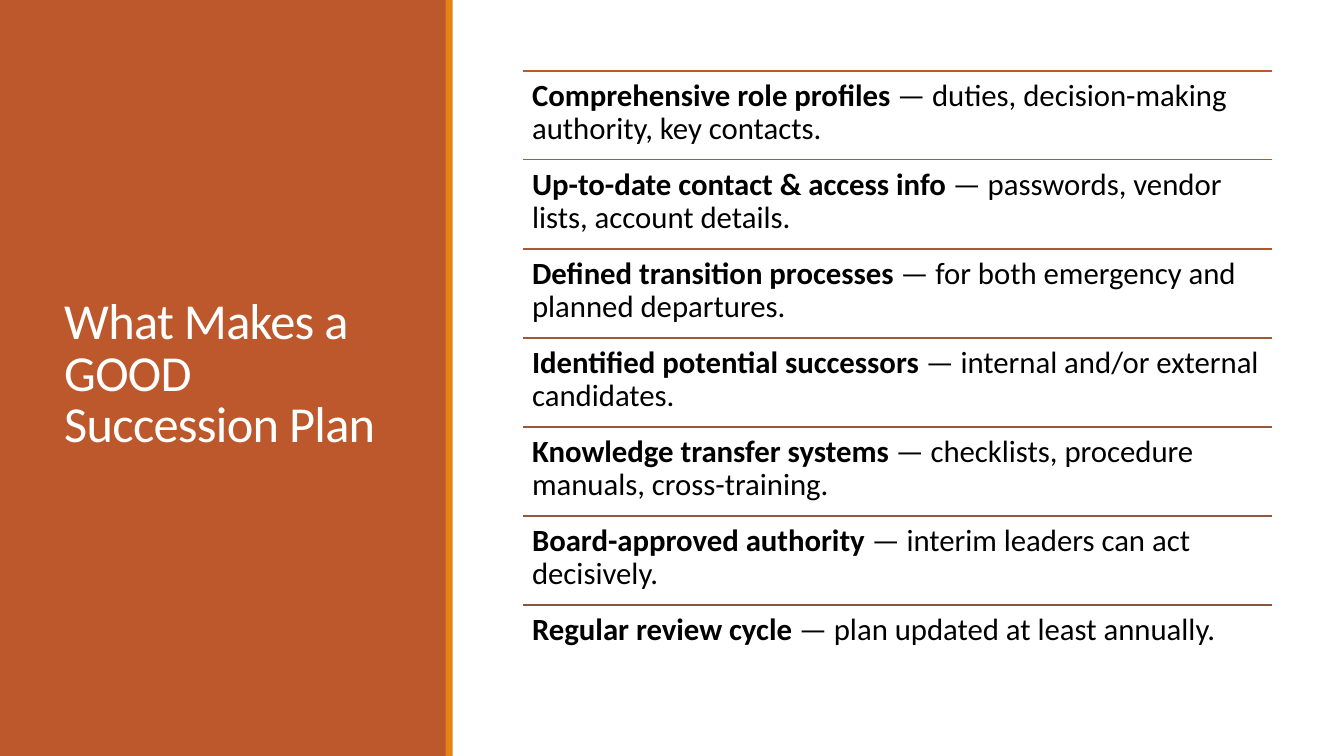
from pptx import Presentation
from pptx.dml.color import RGBColor as RGB
from pptx.enum.shapes import MSO_CONNECTOR as CONN, MSO_SHAPE as SHAPE
from pptx.enum.text import MSO_ANCHOR as ANCHOR
from pptx.oxml.ns import qn
from pptx.util import Cm, Pt
from lxml import etree

COLORS = {
    "panel": "BD582C",
    "accent": "E48312",
    "white": "FFFFFF",
    "text": "000000",
    "rule1": "BD582C",
    "rule2": "B35830",
    "rule3": "AA5834",
    "rule4": "A05837",
    "rule5": "97573A",
    "rule6": "8F573D",
    "rule7": "865640",
}
TITLE = {"name": "Calibri", "size": Pt(36)}
LEAD = {"name": "Calibri", "size": Pt(22), "bold": True}
BODY = {**LEAD, "bold": False}

ITEMS = [
    ("Comprehensive role profiles", "duties, decision-making authority, key contacts."),
    ("Up-to-date contact & access info", "passwords, vendor lists, account details."),
    ("Defined transition processes", "for both emergency and planned departures."),
    ("Identified potential successors", "internal and/or external candidates."),
    ("Knowledge transfer systems", "checklists, procedure manuals, cross-training."),
    ("Board-approved authority", "interim leaders can act decisively."),
    ("Regular review cycle", "plan updated at least annually."),
]


def color(key):
    return RGB.from_string(COLORS[key])


def add_rect(slide, x, y, w, h, fill):
    sp = slide.shapes.add_shape(SHAPE.RECTANGLE, Cm(x), Cm(y), Cm(w), Cm(h))
    sp.shadow.inherit = False
    sp.fill.solid()
    sp.fill.fore_color.rgb = color(fill)
    sp.line.fill.background()


def add_text(slide, x, y, w, h, line_spacing, frame):
    tf = slide.shapes.add_textbox(Cm(x), Cm(y), Cm(w), Cm(h)).text_frame
    for name, value in {"word_wrap": True, **frame}.items():
        setattr(tf, name, value)
    p = tf.paragraphs[0]
    p.line_spacing = line_spacing
    return p


def add_run(p, text, fmt, fill):
    r = p.add_run()
    r.text = text
    for name, value in fmt.items():
        setattr(r.font, name, value)
    r.font.color.rgb = color(fill)
    return r


def add_rule(slide, x, y, w, fill):
    ln = slide.shapes.add_connector(CONN.STRAIGHT, Cm(x), Cm(y), Cm(x + w), Cm(y))
    ln.line.color.rgb = color(fill)
    ln.line.width = Pt(1.25)
    etree.SubElement(ln._element.spPr, qn("a:effectLst"))


def title_panel(slide, x, y, w, h):
    add_rect(slide, x, y, w, h, "panel")
    p = add_text(slide, x + 1.37, y + 1.45, w - 2.69, h - 3.02, 0.85,
                 {"vertical_anchor": ANCHOR.MIDDLE})
    r = add_run(p, "What Makes a GOOD Succession Plan", TITLE, "white")
    r._r.get_or_add_rPr().set("spc", "-50")
    add_rect(slide, x + w - 0.02, y, 0.18, h, "accent")


def ruled_list(slide, x, y, w, h):
    row = h / len(ITEMS)
    inset = Cm(0.23)
    margins = {f"margin_{side}": inset for side in ("left", "top", "right", "bottom")}
    for i, (lead, detail) in enumerate(ITEMS):
        top = y + i * row
        add_rule(slide, x, top, w, f"rule{i + 1}")
        p = add_text(slide, x, top, w, row, 0.9, margins)
        add_run(p, lead, LEAD, "text")
        add_run(p, f" — {detail}", BODY, "text")


def main():
    prs = Presentation()
    prs.slide_width, prs.slide_height = Cm(33.87), Cm(19.05)
    slide = prs.slides.add_slide(prs.slide_layouts[6])
    slide.background.fill.solid()
    slide.background.fill.fore_color.rgb = color("white")
    title_panel(slide, 0, 0, 11.25, 19.05)
    ruled_list(slide, 13.18, 1.78, 18.87, 15.7)
    prs.save("out.pptx")


if __name__ == "__main__":
    main()
